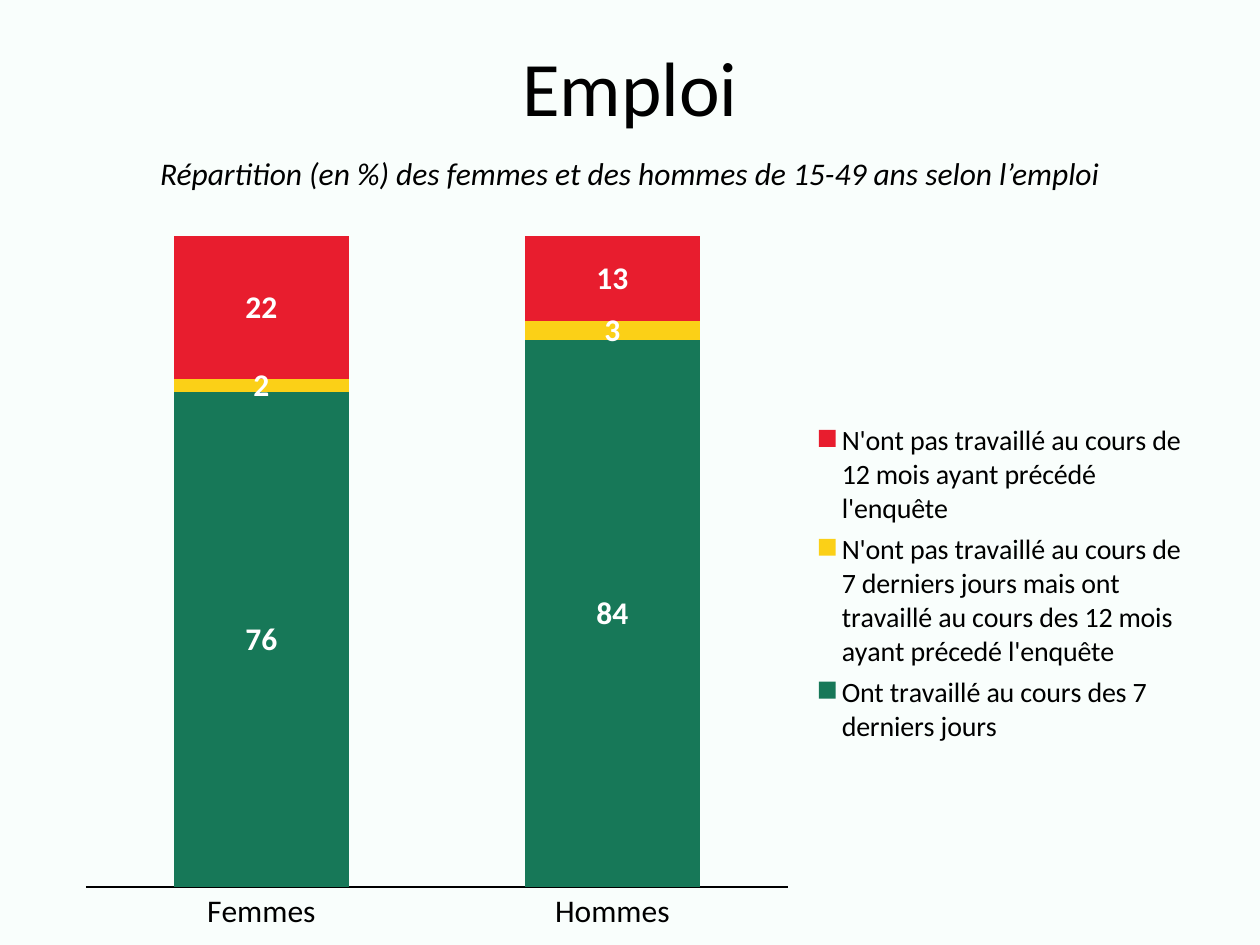
import pptx
import pptx.util
import pptx.chart.data
import pptx.dml.color
import pptx.enum.chart
import pptx.enum.text
import pptx.oxml
import pptx.oxml.ns

RGBColor = pptx.dml.color.RGBColor
BACKGROUND = RGBColor(0xF9, 0xFE, 0xFC)
BLACK = RGBColor(0, 0, 0)
WHITE = RGBColor(0xFF, 0xFF, 0xFF)
GREEN = RGBColor(0x17, 0x78, 0x58)
YELLOW = RGBColor(0xFB, 0xD0, 0x17)
RED = RGBColor(0xE8, 0x1D, 0x2E)
FONT = "Calibri"
PX = 914400 // 126  # EMU per pixel

prs = pptx.Presentation()
prs.slide_width, prs.slide_height = 1260 * PX, 945 * PX
s = prs.slides.add_slide(prs.slide_layouts[6])
s.background.fill.solid()
s.background.fill.fore_color.rgb = BACKGROUND


def add_text(text, x, y, w, h, size, italic=False, spacing=1.0):
    tf = s.shapes.add_textbox(x * PX, y * PX, w * PX, h * PX).text_frame
    tf.word_wrap = True
    tf.vertical_anchor = pptx.enum.text.MSO_ANCHOR.MIDDLE
    p = tf.paragraphs[0]
    p.alignment = pptx.enum.text.PP_ALIGN.CENTER
    p.line_spacing = spacing
    r = p.add_run()
    r.text = text
    set_font(r.font, size, italic=italic)


def set_font(font, size, color=BLACK, bold=False, italic=False):
    font.name, font.size = FONT, pptx.util.Pt(size)
    font.bold, font.italic = bold, italic
    font.color.rgb = color


# Title
add_text("Emploi", 0, 0, 1260, 183, 44, spacing=0.9)

# Stacked chart, bottom series first
series = [
    ("Ont travaillé au cours des 7 derniers jours", (76, 84), GREEN),
    ("N'ont pas travaillé au cours de 7 derniers jours mais ont travaillé "
     "au cours des 12 mois ayant précedé l'enquête", (2, 3), YELLOW),
    ("N'ont pas travaillé au cours de 12 mois ayant précédé l'enquête",
     (22, 13), RED),
]
data = pptx.chart.data.CategoryChartData(number_format="0")
data.categories = ["Femmes", "Hommes"]
for name, values, color in series:
    data.add_series(name, values)
left, top, width, height = 64, 222, 1138, 723
chart = s.shapes.add_chart(
    pptx.enum.chart.XL_CHART_TYPE.COLUMN_STACKED_100,
    left * PX, top * PX, width * PX, height * PX, data).chart
set_font(chart.font, 10)
chart.has_title = False

plot = chart.plots[0]
plot.gap_width, plot.overlap = 100, 100
plot.vary_by_categories = False
for ser, (name, values, color) in zip(plot.series, series):
    ser.format.fill.solid()
    ser.format.fill.fore_color.rgb = color
    labels = ser.data_labels
    labels.show_value = True
    labels.number_format, labels.number_format_is_linked = "0", False
    labels.position = pptx.enum.chart.XL_LABEL_POSITION.CENTER
    set_font(labels.font, 18, WHITE, bold=True)

# Axes
axis = chart.category_axis
axis.major_tick_mark = pptx.enum.chart.XL_TICK_MARK.NONE
axis.format.line.color.rgb = BLACK
axis.format.line.width = pptx.util.Pt(0.75)
set_font(axis.tick_labels.font, 18)
chart.value_axis.visible = False
chart.value_axis.has_major_gridlines = False

# Legend
chart.has_legend = True
legend = chart.legend
legend.position = pptx.enum.chart.XL_LEGEND_POSITION.RIGHT
legend.include_in_layout = False
set_font(legend.font, 16)

# Fixed places for plot and legend, in px on the slide
plot_area = chart._chartSpace.chart.plotArea
for parent, index, target, (x, y, w, h) in (
        (plot_area, 0, '<c:layoutTarget val="inner"/>', (86, 236, 702, 651)),
        (legend._element, 1, "", (814, 418, 372, 333))):
    for old in parent.findall(pptx.oxml.ns.qn("c:layout")):
        parent.remove(old)
    box = ((x - left) / width, (y - top) / height, w / width, h / height)
    modes = '<c:xMode val="edge"/><c:yMode val="edge"/>'
    sizes = "".join(f'<c:{k} val="{v:.4f}"/>' for k, v in zip("xywh", box))
    parent.insert(index, pptx.oxml.parse_xml(
        f'<c:layout {pptx.oxml.ns.nsdecls("c")}><c:manualLayout>'
        f"{target}{modes}{sizes}</c:manualLayout></c:layout>"))

# Subtitle
add_text("Répartition (en %) des femmes et des hommes de 15-49 ans selon l’emploi",
         0, 148, 1260, 50, 18, italic=True)

prs.save("out.pptx")
